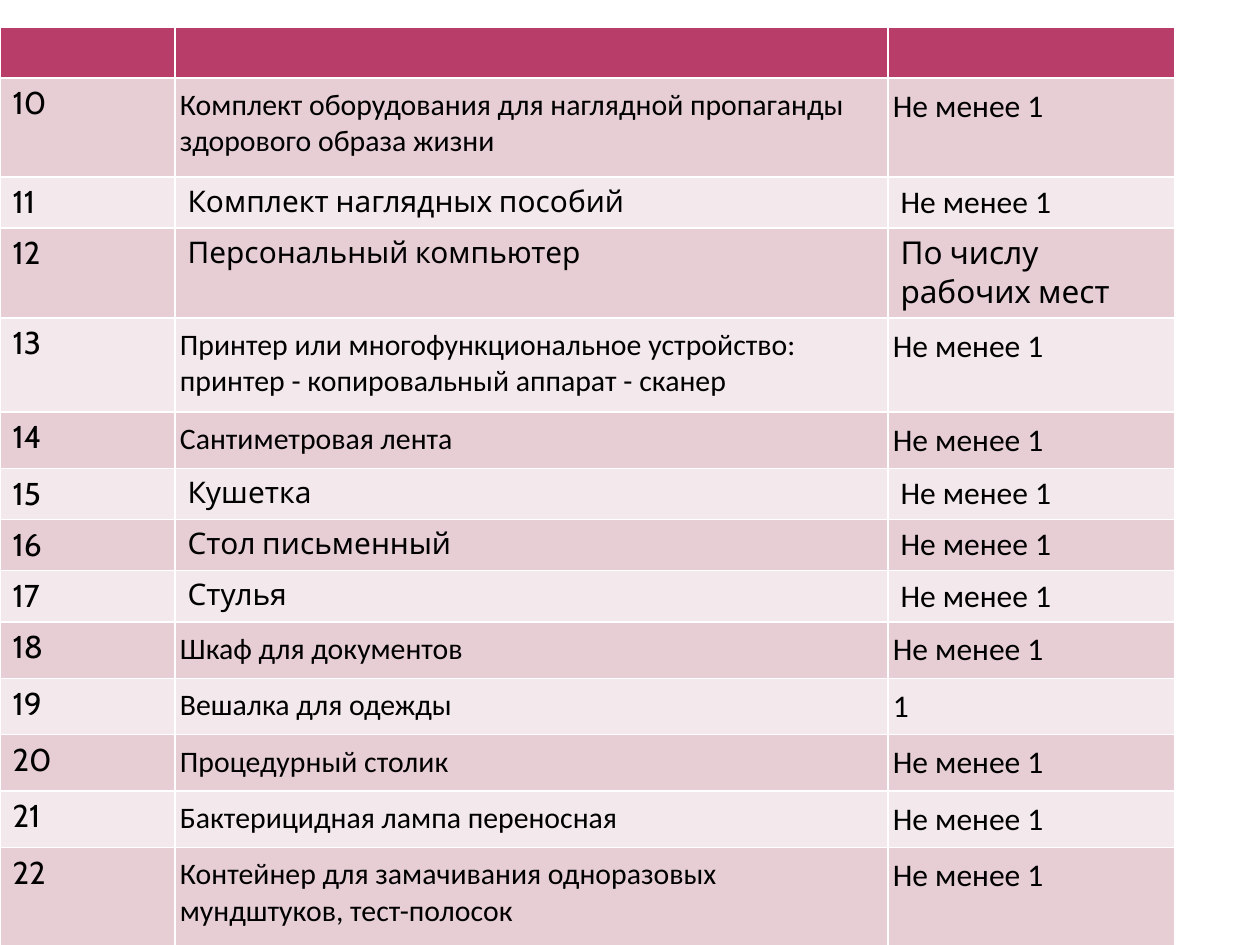
import pptx
import pptx.util
import pptx.dml.color

SCALE = 914400 // 126

COLS = [175, 713, 287]
ONE = "Не менее 1"

# height, number, item, count, tight margins
ROWS = [
    (99, "10", "Комплект оборудования для наглядной пропаганды здорового образа жизни", ONE, True),
    (51, "11", "Комплект наглядных пособий", ONE, False),
    (90, "12", "Персональный компьютер", "По числу рабочих мест", False),
    (94, "13", "Принтер или многофункциональное устройство: "
               "принтер - копировальный аппарат - сканер", ONE, True),
    (56, "14", "Сантиметровая лента", ONE, True),
    (51, "15", "Кушетка", ONE, False),
    (51, "16", "Стол письменный", ONE, False),
    (51, "17", "Стулья", ONE, False),
    (56, "18", "Шкаф для документов", ONE, True),
    (56, "19", "Вешалка для одежды", "1", True),
    (56, "20", "Процедурный столик", ONE, True),
    (56, "21", "Бактерицидная лампа переносная", ONE, True),
    (100, "22", "Контейнер для замачивания одноразовых мундштуков, тест-полосок", ONE, True),
]
HEAD = 51


def px(size):
    return pptx.util.Emu(size * SCALE)


def color(text):
    return pptx.dml.color.RGBColor.from_string(text)


class Deck:
    head = "B83D68"
    bands = ("E6CED4", "F3E8EB")
    ink = "000000"
    main = "Cabin"
    plain = "Calibri"

    def __init__(self, slide):
        self.slide = slide

    def grid(self, left, top, cols, rows):
        """Add an empty table with the given column widths and row heights."""
        frame = self.slide.shapes.add_table(
            len(rows), len(cols), px(left), px(top), px(sum(cols)), px(sum(rows)))
        table = frame.table
        for col, width in zip(table.columns, cols):
            col.width = px(width)
        for row, height in zip(table.rows, rows):
            row.height = px(height)
        return table

    def shade(self, cell, tone):
        cell.fill.solid()
        cell.fill.fore_color.rgb = color(tone)

    def label(self, cell, text, size, font, tight):
        if tight:
            cell.margin_left = cell.margin_right = px(5)
            cell.margin_top = cell.margin_bottom = px(9)
        cell.text_frame.text = text
        style = cell.text_frame.paragraphs[0].runs[0].font
        style.size = pptx.util.Pt(size)
        style.name = font
        style.color.rgb = color(self.ink)


def main():
    show = pptx.Presentation()
    show.slide_width = pptx.util.Inches(10)
    show.slide_height = pptx.util.Inches(7.5)
    deck = Deck(show.slides.add_slide(show.slide_layouts[6]))

    table = deck.grid(0, 27, COLS, [HEAD] + [row[0] for row in ROWS])
    for cell in table.rows[0].cells:
        deck.shade(cell, deck.head)

    for i, (_, number, item, count, tight) in enumerate(ROWS):
        cells = list(table.rows[i + 1].cells)
        for cell in cells:
            deck.shade(cell, deck.bands[i % 2])
        deck.label(cells[0], number, 18, deck.main, False)
        deck.label(cells[1], item, 17, deck.plain if tight else deck.main, tight)
        font = deck.main if number == "12" else deck.plain
        deck.label(cells[2], count, 18, font, tight)

    show.save("out.pptx")


if __name__ == "__main__":
    main()
